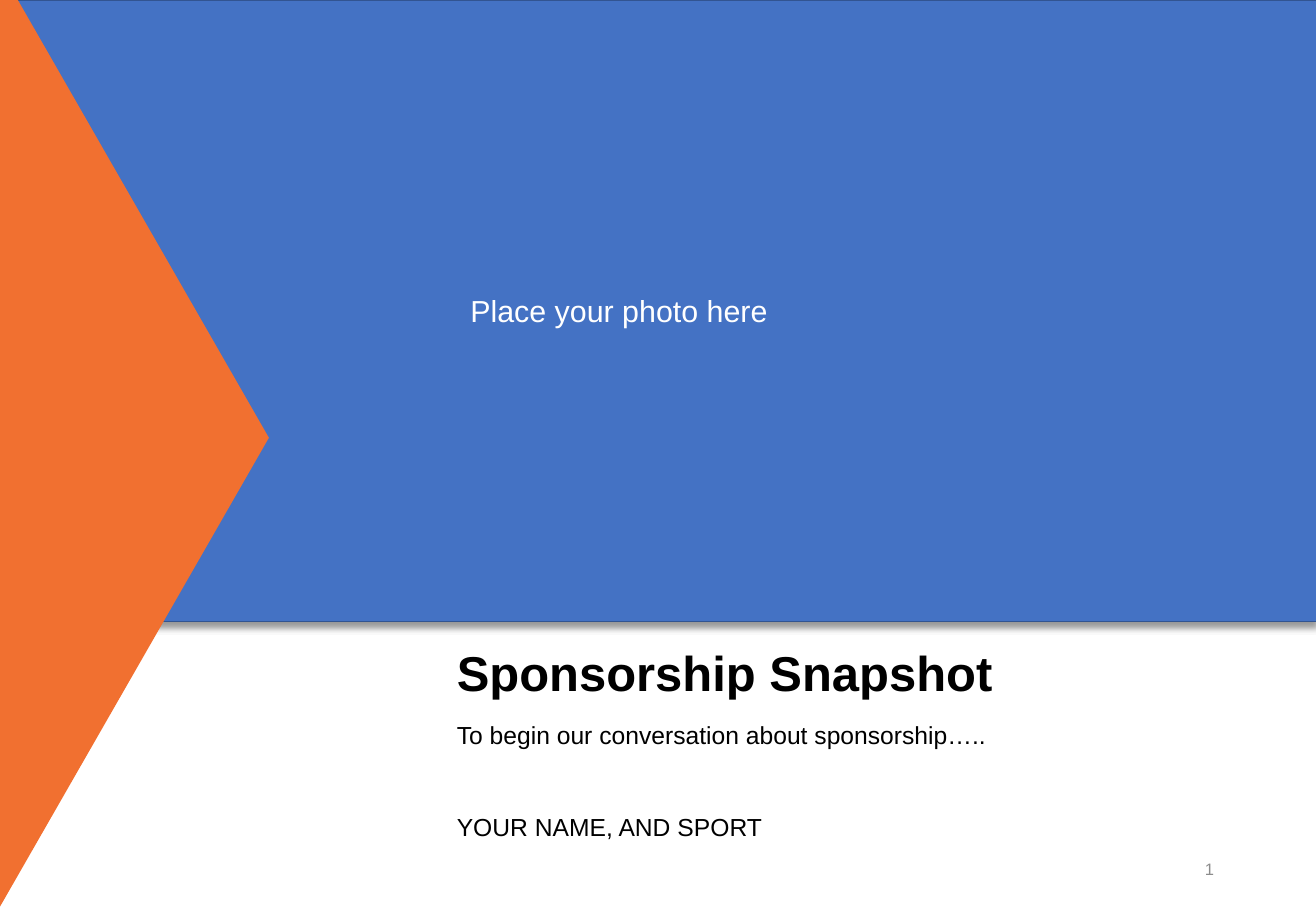
from lxml import etree
from pptx import Presentation
from pptx.dml.color import RGBColor
from pptx.enum.shapes import MSO_SHAPE
from pptx.enum.text import MSO_ANCHOR, PP_ALIGN
from pptx.oxml.ns import qn
from pptx.util import Cm, Pt

RECTANGLE, TRIANGLE = MSO_SHAPE.RECTANGLE, MSO_SHAPE.ISOSCELES_TRIANGLE
TOP, MIDDLE = MSO_ANCHOR.TOP, MSO_ANCHOR.MIDDLE
LEFT, CENTER, RIGHT = PP_ALIGN.LEFT, PP_ALIGN.CENTER, PP_ALIGN.RIGHT
PAGE_WIDTH, PAGE_HEIGHT = 27.51, 19.05
BLUE, DARK_BLUE, ORANGE = "4472C4", "325491", "F17030"
WHITE, BLACK, GREY = "FFFFFF", "000000", "8C8C8C"
SPACED = {"space_before": Pt(6), "space_after": Pt(6)}
LOOSE = {**SPACED, "line_spacing": 1.5}


def color(hex_string):
    """Turn a hex string into a colour."""
    return RGBColor.from_string(hex_string)


def apply(target, values):
    """Set each named attribute of the target."""
    for name, value in values.items():
        setattr(target, name, value)


def add_block(page, kind, box, fill):
    """Add a filled shape without outline or shadow."""
    shape = page.shapes.add_shape(kind, *map(Cm, box))
    shape.fill.solid()
    shape.fill.fore_color.rgb = color(fill)
    shape.line.fill.background()
    shape.shadow.inherit = False
    return shape


def write(shape, text, size, hex_string, bold=False, anchor=TOP, align=LEFT, spacing=None):
    """Write one formatted paragraph into a shape."""
    apply(shape.text_frame, {"word_wrap": True, "vertical_anchor": anchor})
    para = shape.text_frame.paragraphs[0]
    apply(para, {"alignment": align, **(spacing or {})})
    span = para.add_run()
    span.text = text
    apply(span.font, {"name": "Arial", "size": Pt(size), "bold": bold})
    span.font.color.rgb = color(hex_string)


def add_drop_shadow(shape):
    """Give a shape a soft shadow below it."""
    effects = shape.element.spPr.find(qn("a:effectLst"))
    shadow = etree.SubElement(effects, qn("a:outerShdw"), blurRad=str(Pt(4)),
                              dist=str(Pt(3)), dir="5400000", algn="t", rotWithShape="0")
    tint = etree.SubElement(shadow, qn("a:srgbClr"), val=BLACK)
    etree.SubElement(tint, qn("a:alpha"), val="40000")


def photo_area(page, box):
    """Fill the box with the photo placeholder panel."""
    panel = add_block(page, RECTANGLE, box, BLUE)
    panel.line.color.rgb = color(DARK_BLUE)
    panel.line.width = Pt(1)
    add_drop_shadow(panel)
    write(panel, "Place your photo here", 18, WHITE, anchor=MIDDLE, align=CENTER)


def side_arrow(page, box):
    """Fill the box with a triangle that points right."""
    left, top, width, height = box
    upright = (left + (width - height) / 2, top + (height - width) / 2, height, width)
    add_block(page, TRIANGLE, upright, ORANGE).rotation = 90


def page_number(page, box):
    """Write the page number at the right of the box."""
    number = page.shapes.add_textbox(*map(Cm, box))
    write(number, "1", 9.8, GREY, anchor=MIDDLE, align=RIGHT)


def caption(page, box):
    """Stack the title, the lead and the name in the box."""
    left, top, width, height = box
    title = page.shapes.add_textbox(*map(Cm, (left, top, width, 1.5)))
    write(title, "Sponsorship Snapshot", 29, BLACK, bold=True, spacing=SPACED)
    name_height = 1.12
    lines = [
        ("YOUR NAME, AND SPORT", (left, top + height - name_height, 9.6, name_height)),
        ("To begin our conversation about sponsorship…..", (left, top + 1.32, width, 1.07)),
    ]
    for text, place in lines:
        write(add_block(page, RECTANGLE, place, WHITE), text, 14.6, BLACK, spacing=LOOSE)


def main():
    """Build and save the deck."""
    deck = Presentation()
    deck.slide_width, deck.slide_height = Cm(PAGE_WIDTH), Cm(PAGE_HEIGHT)
    page = deck.slides.add_slide(deck.slide_layouts[6])
    photo_area(page, (-1.65, 0, 29.18, 13))
    side_arrow(page, (-7.77, -14.2, 13.39, 46.71))
    page_number(page, (19.43, 17.65, 6.2, 1.02))
    caption(page, (9.3, 13.31, 15.29, 4.35))
    deck.save("out.pptx")


if __name__ == "__main__":
    main()
